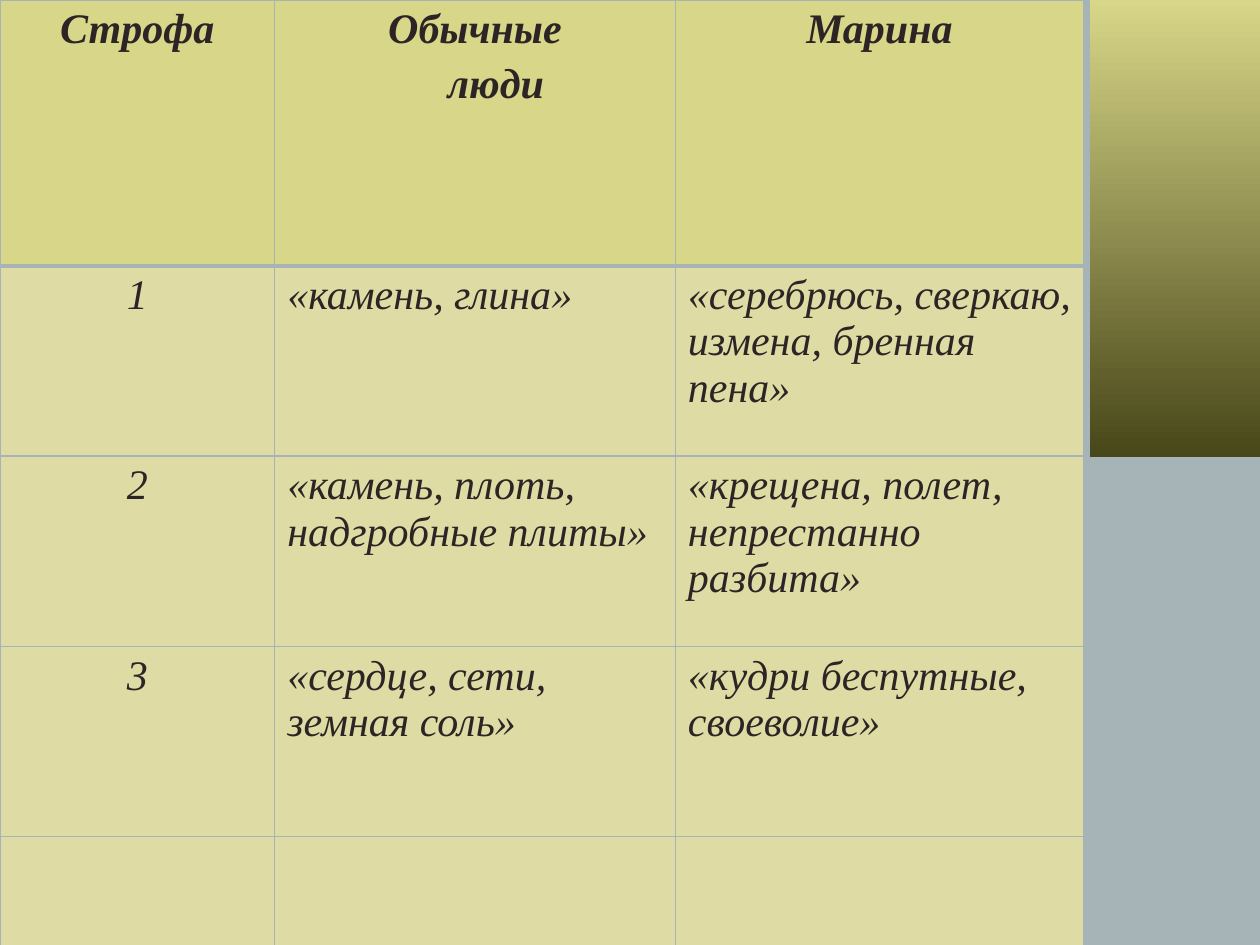
from dataclasses import dataclass

from lxml.etree import SubElement
from pptx import Presentation
from pptx.dml.color import RGBColor
from pptx.enum.shapes import MSO_SHAPE as Shape
from pptx.enum.text import PP_ALIGN as Align
from pptx.oxml.ns import qn
from pptx.util import Inches, Pt

BACKGROUND = "A7B4B7"
HEADER_FILL = "D8D688"
BODY_FILL = "DEDCA4"
OLIVE = "484719"
INK = "2D2525"
FONT = "Times New Roman"
COLUMN_WIDTHS = (2.18, 3.18, 3.24)
SECOND_LINE_INDENT = Inches(0.33)


@dataclass
class Row:
    height: float
    texts: tuple[str, str, str]


ROWS = (
    Row(2.11, ("Строфа", "Обычные\nлюди", "Марина")),
    Row(1.51, ("1", "«камень, глина»", "«серебрюсь, сверкаю, измена, бренная пена»")),
    Row(1.51, ("2", "«камень, плоть, надгробные плиты»",
               "«крещена, полет, непрестанно разбита»")),
    Row(1.51, ("3", "«сердце, сети, земная соль»", "«кудри беспутные, своеволие»")),
    Row(0.87, ("", "", "")),
)


def color(value: str) -> RGBColor:
    return RGBColor.from_string(value)


def add_borders(cell, widths: dict[str, float]) -> None:
    """Draw the cell's sides; they must precede the fill in the cell properties."""
    properties = cell._tc.get_or_add_tcPr()
    for side, width in widths.items():
        line = SubElement(properties, qn(f"a:{side}"), w=str(Pt(width)))
        fill = SubElement(line, qn("a:solidFill"))
        SubElement(fill, qn("a:srgbClr"), val=BACKGROUND)


def format_cell(cell, text: str, is_header: bool, is_centered: bool,
                top: float, bottom: float) -> None:
    add_borders(cell, {"lnL": 1, "lnR": 1, "lnT": top, "lnB": bottom})
    cell.fill.solid()
    cell.fill.fore_color.rgb = color(HEADER_FILL if is_header else BODY_FILL)
    cell.text_frame.text = text
    for index, paragraph in enumerate(cell.text_frame.paragraphs):
        paragraph.alignment = Align.CENTER if is_centered else Align.LEFT
        if index:
            paragraph.space_before = Pt(4.8)
            paragraph._p.get_or_add_pPr().set("marL", str(SECOND_LINE_INDENT))
        for font in [paragraph.font] + [run.font for run in paragraph.runs]:
            font.name = FONT
            font.size = Pt(24)
            font.bold = is_header
            font.italic = True
            font.color.rgb = color(INK)


def add_side_band(slide) -> None:
    band = slide.shapes.add_shape(
        Shape.RECTANGLE, Inches(8.65), 0, Inches(1.36), Inches(3.63))
    band.shadow.inherit = False
    band.line.fill.background()
    band.fill.gradient()
    band.fill.gradient_angle = 270
    for stop, position, value in zip(
            band.fill.gradient_stops, (0, 1), (HEADER_FILL, OLIVE)):
        stop.position = position
        stop.color.rgb = color(value)


def add_stanza_table(slide) -> None:
    table = slide.shapes.add_table(
        len(ROWS), len(COLUMN_WIDTHS), 0, 0,
        Inches(sum(COLUMN_WIDTHS)), Inches(sum(row.height for row in ROWS))).table
    for column, width in zip(table.columns, COLUMN_WIDTHS):
        column.width = Inches(width)
    for r, row in enumerate(ROWS):
        table.rows[r].height = Inches(row.height)
        for c, text in enumerate(row.texts):
            format_cell(table.cell(r, c), text, is_header=r == 0,
                        is_centered=r == 0 or c == 0,
                        top=3 if r == 1 else 1, bottom=3 if r == 0 else 1)


def main() -> None:
    presentation = Presentation()
    presentation.slide_width = Inches(10)
    presentation.slide_height = Inches(7.5)
    slide = presentation.slides.add_slide(presentation.slide_layouts[6])
    slide.background.fill.solid()
    slide.background.fill.fore_color.rgb = color(BACKGROUND)
    add_side_band(slide)
    add_stanza_table(slide)
    presentation.save("out.pptx")


if __name__ == "__main__":
    main()
